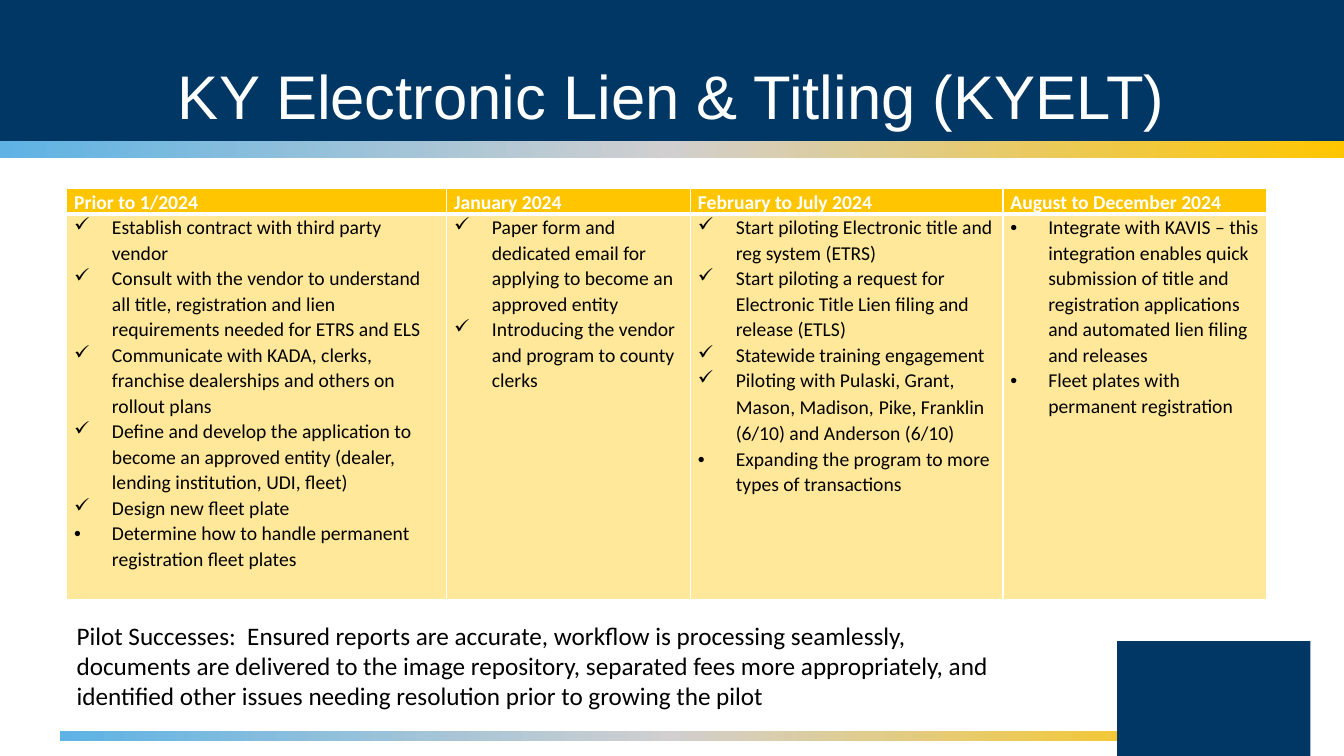
"""Build the KYELT rollout timeline slide."""
from pptx import Presentation
from pptx.dml.color import RGBColor
from pptx.enum.shapes import MSO_SHAPE
from pptx.enum.text import MSO_ANCHOR, PP_ALIGN
from pptx.oxml import parse_xml
from pptx.oxml.ns import nsdecls, qn
from pptx.util import Pt

NAVY, GOLD, CREAM, WHITE, BLACK = "003764", "FFC600", "FFE899", "FFFFFF", "000000"
STRIPE = [(0, "5EB3E4"), (50, "D1CFCF"), (100, GOLD)]
DONE, OPEN = "✓", "•"

TITLE = "KY Electronic Lien & Titling (KYELT)"
SUCCESSES = ("Pilot Successes:  Ensured reports are accurate, workflow is processing seamlessly, "
             "documents are delivered to the image repository, separated fees more appropriately, "
             "and identified other issues needing resolution prior to growing the pilot")
PHASES = [
    ("Prior to 1/2024", 271.4, [
        (DONE, ["Establish contract with third party vendor"]),
        (DONE, ["Consult with the vendor to understand all title, registration and lien "
                "requirements needed for ETRS and ELS"]),
        (DONE, ["Communicate with KADA, clerks, franchise dealerships and others on rollout plans"]),
        (DONE, ["Define and develop the application to become an approved entity (dealer, "
                "lending institution, UDI, fleet)"]),
        (DONE, ["Design new fleet plate"]),
        (OPEN, ["Determine how to handle permanent registration fleet plates"]),
    ]),
    ("January 2024", 174.2, [
        (DONE, ["Paper form and dedicated email for applying to become an approved entity"]),
        (DONE, ["Introducing the vendor and program to county clerks"]),
    ]),
    ("February to July 2024", 223.2, [
        (DONE, ["Start piloting Electronic title and reg system (ETRS)"]),
        (DONE, ["Start piloting a request for Electronic Title Lien filing and release (ETLS)"]),
        (DONE, ["Statewide training engagement"]),
        (DONE, ["Piloting with Pulaski, Grant, Mason, Madison,", " ",
                "Pike, Franklin (6/10) and Anderson (6/10)"]),
        (OPEN, ["Expanding the program to more types of transactions"]),
    ]),
    ("August to December 2024", 188.6, [
        (OPEN, ["Integrate with KAVIS – this integration enables quick submission of title and "
                "registration applications and automated lien filing and releases"]),
        (OPEN, ["Fleet plates with permanent registration"]),
    ]),
]
BANDS = [
    ((0, 0, 960, 100.8), NAVY),
    ((0, 100.8, 960, 12.4), STRIPE),
    ((43, 522, 874, 7.2), STRIPE),
    ((798, 458, 138, 82), NAVY),
]
TABLE_LEFT, TABLE_TOP, ROW_HEIGHTS = 47.6, 134.8, (17.4, 275.6)
INDENT = Pt(27)


def color(value):
    return RGBColor.from_string(value)


def add_band(page, frame, paint):
    band = page.shapes.add_shape(MSO_SHAPE.RECTANGLE, *map(Pt, frame))
    band.shadow.inherit = False
    band.line.fill.background()
    if isinstance(paint, str):
        band.fill.solid()
        band.fill.fore_color.rgb = color(paint)
        return
    band.fill.gradient()
    band.fill.gradient_angle = 0
    stops = band._element.spPr.find(qn("a:gradFill")).find(qn("a:gsLst"))
    stops.clear()
    for percent, shade in paint:
        stops.append(parse_xml(f'<a:gs {nsdecls("a")} pos="{percent * 1000}">'
                               f'<a:srgbClr val="{shade}"/></a:gs>'))


def add_span(para, text, size, shade, font="Calibri", bold=False):
    span = para.add_run()
    span.text = text
    span.font.name, span.font.size, span.font.bold = font, Pt(size), bold
    span.font.color.rgb = color(shade)


def add_text(page, frame, text, size, shade, font="Calibri"):
    box = page.shapes.add_textbox(*map(Pt, frame))
    box.text_frame.word_wrap = True
    para = box.text_frame.paragraphs[0]
    add_span(para, text, size, shade, font)
    return box.text_frame, para


def style_cell(cell, paint, top, bottom):
    cell.margin_left = cell.margin_right = Pt(5.4)
    cell.margin_top = cell.margin_bottom = 0
    properties = cell._tc.get_or_add_tcPr()
    for side, width in (("L", 1), ("R", 1), ("T", top), ("B", bottom)):
        properties.append(parse_xml(
            f'<a:ln{side} {nsdecls("a")} w="{Pt(width)}"><a:solidFill>'
            f'<a:srgbClr val="{WHITE}"/></a:solidFill></a:ln{side}>'))
    cell.fill.solid()
    cell.fill.fore_color.rgb = color(paint)


def add_task(para, mark, texts):
    para.line_spacing = 1.07
    properties = para._p.get_or_add_pPr()
    properties.set("marL", str(INDENT))
    properties.set("indent", str(-INDENT))
    if mark == OPEN:
        properties.append(parse_xml(f'<a:buFont {nsdecls("a")} typeface="Arial"/>'))
    properties.append(parse_xml(f'<a:buChar {nsdecls("a")} char="{mark}"/>'))
    for text in texts:
        add_span(para, text, 15 if text == " " else 14, BLACK)


def add_timeline(page):
    width = sum(phase[1] for phase in PHASES)
    table = page.shapes.add_table(2, len(PHASES), Pt(TABLE_LEFT), Pt(TABLE_TOP),
                                  Pt(width), Pt(sum(ROW_HEIGHTS))).table
    for row, height in zip(table.rows, ROW_HEIGHTS):
        row.height = Pt(height)
    for column, (heading, column_width, tasks) in enumerate(PHASES):
        table.columns[column].width = Pt(column_width)
        header, body = table.cell(0, column), table.cell(1, column)
        style_cell(header, GOLD, 1, 3)
        style_cell(body, CREAM, 3, 1)
        para = header.text_frame.paragraphs[0]
        para.line_spacing = 1.07
        add_span(para, heading, 14, WHITE, bold=True)
        for index, (mark, texts) in enumerate(tasks):
            frame = body.text_frame
            add_task(frame.add_paragraph() if index else frame.paragraphs[0], mark, texts)


def main():
    deck = Presentation()
    deck.slide_width, deck.slide_height = Pt(960), Pt(540)
    page = deck.slides.add_slide(deck.slide_layouts[6])
    for frame, paint in BANDS:
        add_band(page, frame, paint)
    add_timeline(page)
    frame, para = add_text(page, (0, 28, 960, 85.6), TITLE, 44, WHITE, "Arial")
    frame.vertical_anchor = MSO_ANCHOR.MIDDLE
    para.alignment, para.line_spacing = PP_ALIGN.CENTER, 0.9
    add_text(page, (TABLE_LEFT, 439.2, 685.4, 72.7), SUCCESSES, 18, BLACK)
    deck.save("out.pptx")


if __name__ == "__main__":
    main()
